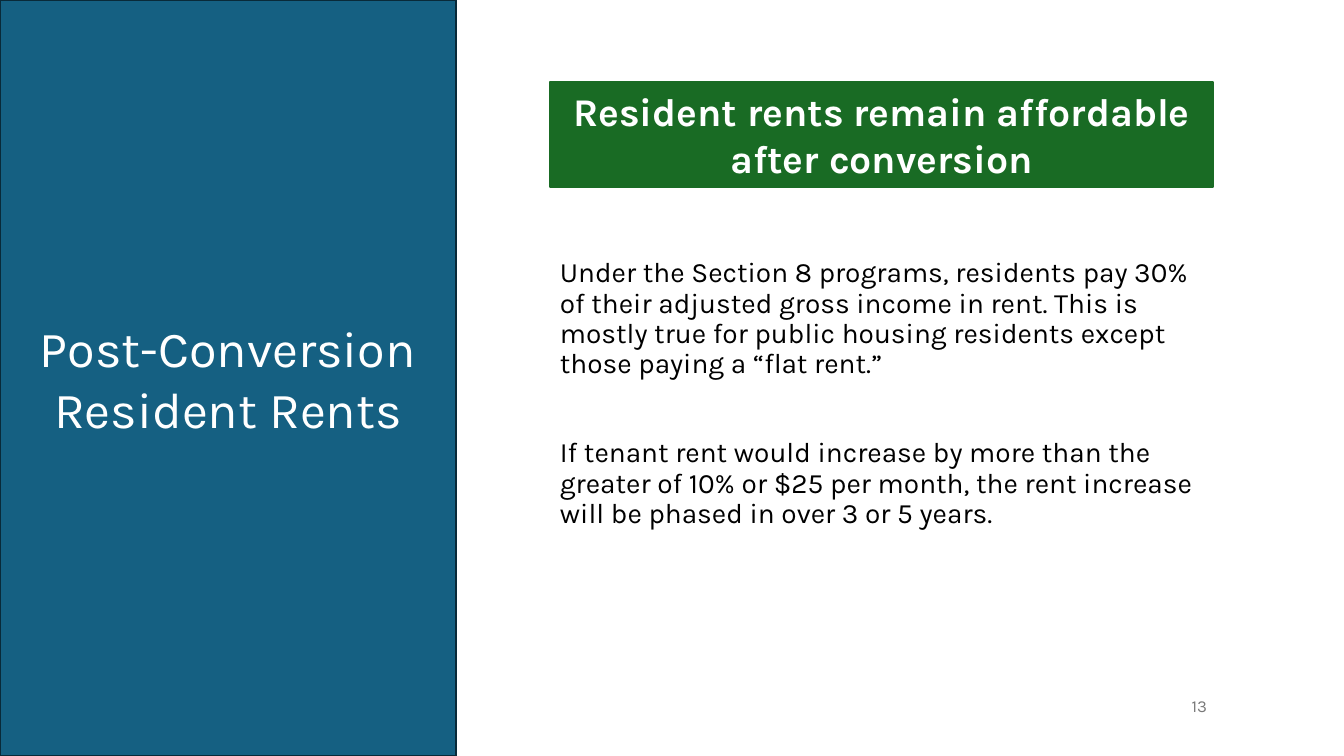
from pptx import Presentation
from pptx.dml.color import RGBColor
from pptx.enum.shapes import MSO_SHAPE
from pptx.enum.text import MSO_ANCHOR, MSO_AUTO_SIZE, PP_ALIGN
from pptx.util import Emu, Pt

TITLE = "Post-Conversion Resident Rents"
HEADLINE = "Resident rents remain affordable after conversion"
RENT_RULES = [
    "Under the Section 8 programs, residents pay 30% of their adjusted gross "
    "income in rent. This is mostly true for public housing residents except "
    "those paying a “flat rent.”",
    "If tenant rent would increase by more than the greater of 10% or $25 per "
    "month, the rent increase will be phased in over 3 or 5 years.",
]
PAGE_NUMBER = "13"

FONT = "Karla"
SLIDE_W, SLIDE_H = 1344, 756
PANEL_W = 456
COLUMN_X, COLUMN_W = 550, 663


def px(length):
    return Emu(round(length * 914400 / 100.8))


def color(hex_code):
    return RGBColor.from_string(hex_code)


def write(frame, texts, size, hex_code, align, anchor, bold=False):
    frame.word_wrap = True
    frame.vertical_anchor = anchor
    for index, text in enumerate(texts):
        paragraph = frame.paragraphs[0] if index == 0 else frame.add_paragraph()
        paragraph.text = text
        paragraph.alignment = align
        paragraph.font.name = FONT
        paragraph.font.size = Pt(size)
        paragraph.font.bold = bold
        paragraph.font.color.rgb = color(hex_code)


def add_block(box, fill, line):
    block = slide.shapes.add_shape(MSO_SHAPE.RECTANGLE, *map(px, box))
    block.shadow.inherit = False
    block.fill.solid()
    block.fill.fore_color.rgb = color(fill)
    block.line.color.rgb = color(line)
    block.line.width = Pt(1.5)
    return block.text_frame


def add_text(box):
    return slide.shapes.add_textbox(*map(px, box)).text_frame


deck = Presentation()
deck.slide_width, deck.slide_height = px(SLIDE_W), px(SLIDE_H)
slide = deck.slides.add_slide(deck.slide_layouts[6])

# Rent rules, set a little below the middle of their box
rules = add_text((COLUMN_X, 97, COLUMN_W, 548))
write(rules, RENT_RULES, 20, "000000", PP_ALIGN.LEFT, MSO_ANCHOR.MIDDLE)
rules.margin_top = px(51)
for rule in rules.paragraphs:
    rule.line_spacing = 0.9
for rule in rules.paragraphs[1:]:
    rule.space_before = Pt(42)

# Page number
page_number = add_text((1099, 686, 118, 40))
write(page_number, [PAGE_NUMBER], 12, "797979", PP_ALIGN.RIGHT, MSO_ANCHOR.MIDDLE)
page_number.paragraphs[0].space_after = Pt(6)

# Headline banner
headline = add_block((COLUMN_X, 82, COLUMN_W, 105), "196B24", "196B24")
write(headline, [HEADLINE], 28, "FFFFFF", PP_ALIGN.CENTER, MSO_ANCHOR.TOP, bold=True)
headline.auto_size = MSO_AUTO_SIZE.SHAPE_TO_FIT_TEXT

# Title panel
title = add_block((0, 0, PANEL_W, SLIDE_H), "156082", "092A39")
write(title, [TITLE], 36, "FFFFFF", PP_ALIGN.CENTER, MSO_ANCHOR.MIDDLE)

deck.save("out.pptx")
